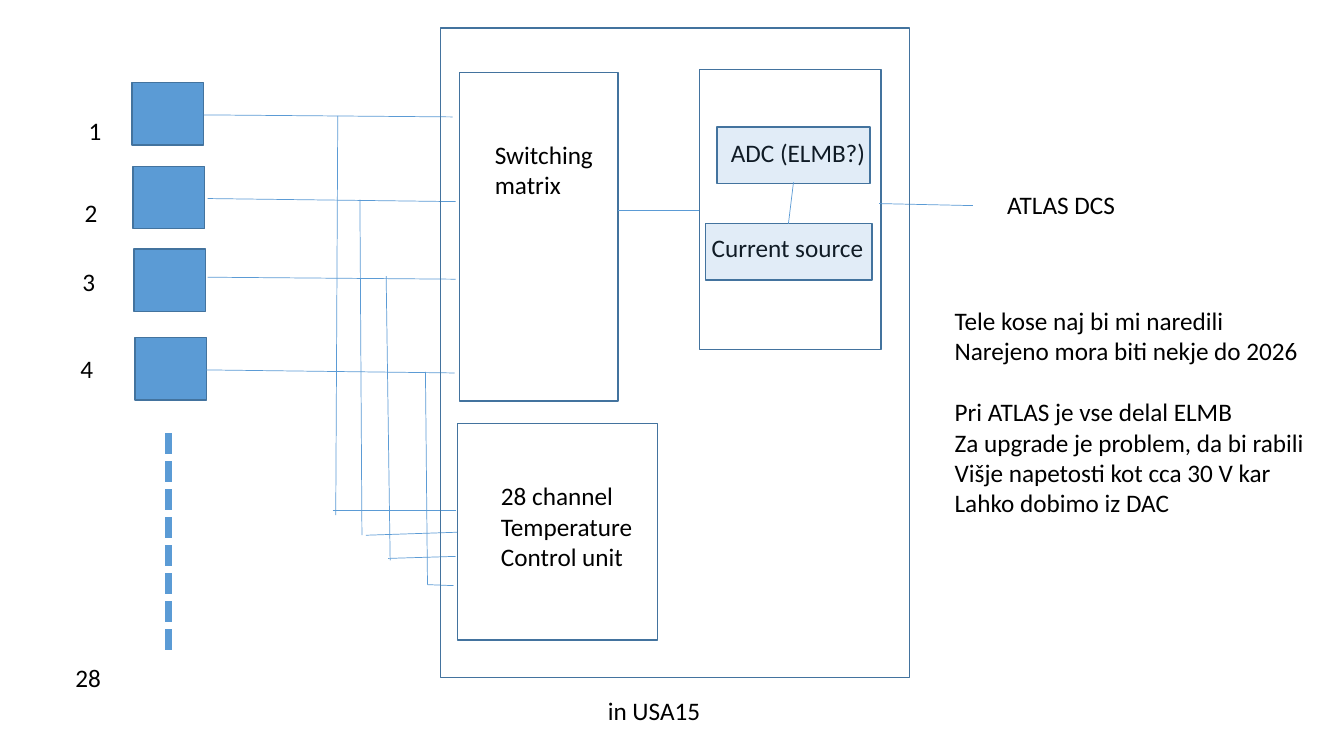
from pptx import Presentation
from pptx.dml.color import RGBColor
from pptx.enum.dml import MSO_LINE
from pptx.enum.shapes import MSO_CONNECTOR, MSO_SHAPE
from pptx.enum.text import MSO_AUTO_SIZE
from pptx.oxml.ns import qn
from pptx.util import Inches, Pt
from lxml import etree

RECT = MSO_SHAPE.RECTANGLE
STRAIGHT = MSO_CONNECTOR.STRAIGHT
DASH = MSO_LINE.SQUARE_DOT
GROW = MSO_AUTO_SIZE.SHAPE_TO_FIT_TEXT
BLUE = RGBColor(0x5B, 0x9B, 0xD5)
EDGE = RGBColor(0x43, 0x73, 0x9E)
BLACK = RGBColor(0, 0, 0)


def add_box(slide, x, y, w, h, fill=None, alpha=None):
    """Draw an outlined rectangle, optionally filled and translucent."""
    box = slide.shapes.add_shape(RECT, Inches(x), Inches(y), Inches(w), Inches(h))
    box.shadow.inherit = False
    box.line.color.rgb = EDGE
    box.line.width = Pt(1)
    if fill is None:
        box.fill.background()
        return
    box.fill.solid()
    box.fill.fore_color.rgb = fill
    if alpha:
        color = box.fill._xPr.find(qn("a:solidFill"))[0]
        etree.SubElement(color, qn("a:alpha")).set("val", str(alpha * 1000))


def add_wire(slide, x, y, ends, width=0.5):
    """Draw a line between two points measured from x, y and return it."""
    x1, y1, x2, y2 = ends
    wire = slide.shapes.add_connector(
        STRAIGHT, Inches(x + x1), Inches(y + y1), Inches(x + x2), Inches(y + y2))
    wire.line.color.rgb = BLUE
    wire.line.width = Pt(width)
    etree.SubElement(wire._element.spPr, qn("a:effectLst"))
    return wire


def add_label(slide, x, y, w, h, text):
    """Write unwrapped black text and return its frame."""
    frame = slide.shapes.add_textbox(
        Inches(x), Inches(y), Inches(w), Inches(h)).text_frame
    frame.text = text
    frame.word_wrap = False
    frame.auto_size = GROW
    for para in frame.paragraphs:
        font = para.runs[0].font
        font.name = "Calibri"
        font.size = Pt(18)
        font.color.rgb = BLACK
    return frame


def add_sensors(slide, x, y):
    """Stack the numbered sensors, with dashes leading to the last one."""
    rows = [(0, 0.13, 0.27), (0.83, 0.09, 1.09), (1.65, 0.07, 1.77), (2.53, 0.05, 2.64)]
    for i, (top, left, mid) in enumerate(rows):
        add_box(slide, x + 0.66 + i * 0.01, y + top, 0.71, 0.62, BLUE)
        add_label(slide, x + left, y + mid, 0.33, 0.4, str(i + 1))
    add_wire(slide, x, y, (1.02, 3.48, 1.02, 5.68), 5).line.dash_style = DASH
    add_label(slide, x, y + 5.7, 0.46, 0.4, "28")


def add_harness(slide, x, y):
    """Run each sensor's lead to the matrix and its branch to the control unit."""
    leads = [(0, 0, 2.47, 0.02), (0.04, 0.83, 2.5, 0.86),
             (0.04, 1.61, 2.5, 1.63), (0.02, 2.53, 2.49, 2.56)]
    drops = [(1.33, 0.01, 1.31, 3.97), (1.55, 0.84, 1.57, 4.17),
             (1.81, 1.6, 1.85, 4.42), (2.2, 2.55, 2.22, 4.66)]
    feeds = [(1.28, 3.92, 2.5, 3.92), (1.61, 4.17, 2.52, 4.14),
             (1.83, 4.4, 2.5, 4.38), (2.22, 4.66, 2.48, 4.67)]
    for ends in leads + drops + feeds:
        add_wire(slide, x, y, ends)


def add_readout(slide, x, y, w, h):
    """Draw the readout unit with its converter and current source."""
    add_box(slide, x, y, w, h)
    add_label(slide, x + 0.21, y + 0.62, 1.55, 0.4, "ADC (ELMB?)")
    add_label(slide, x + 0.02, y + 1.57, 1.72, 0.4, "Current source")
    add_box(slide, x + 0.17, y + 0.57, 1.52, 0.56, BLUE, 18)
    add_box(slide, x + 0.06, y + 1.53, 1.65, 0.56, BLUE, 18)
    for ends in [(0.93, 1.12, 0.88, 1.53), (-0.81, 1.4, -0.01, 1.4),
                 (1.78, 1.33, 2.71, 1.35)]:
        add_wire(slide, x, y, ends)
    add_label(slide, x + 2.95, y + 1.14, 1.28, 0.4, "ATLAS DCS")


def add_rack(slide, x, y, w, h):
    """Draw the rack with its matrix, control unit and readout."""
    add_box(slide, x + 0.19, y + 0.44, 1.57, 3.26)
    add_label(slide, x + 0.44, y + 1.05, 1.19, 0.71, "Switching\nmatrix")
    add_box(slide, x + 0.17, y + 3.92, 1.98, 2.15)
    add_label(slide, x + 0.5, y + 4.44, 1.52, 1.01,
              "28 channel\nTemperature\nControl unit")
    add_readout(slide, x + 2.57, y + 0.41, 1.8, 2.78)
    add_box(slide, x, y, w, h)
    add_label(slide, x + 1.56, y + h + 0.13, 1.13, 0.4, "in USA15")


def add_notes(slide, x, y, w, h):
    """Write the two groups of remarks with a line's gap between them."""
    lines = ["Tele kose naj bi mi naredili",
             "Narejeno mora biti nekje do 2026",
             "Pri ATLAS je vse delal ELMB",
             "Za upgrade je problem, da bi rabili",
             "Višje napetosti kot cca 30 V kar",
             "Lahko dobimo iz DAC"]
    frame = add_label(slide, x, y, w, h, "\n".join(lines))
    frame.paragraphs[2].space_before = Pt(22)


def main():
    """Build and save the slide."""
    deck = Presentation()
    deck.slide_width = Inches(13.33)
    deck.slide_height = Inches(7.5)
    slide = deck.slides.add_slide(deck.slide_layouts[6])
    add_sensors(slide, 0.65, 0.82)
    add_harness(slide, 2.02, 1.14)
    add_rack(slide, 4.37, 0.28, 4.65, 6.44)
    add_notes(slide, 9.37, 2.98, 3.71, 2.22)
    deck.save("out.pptx")


if __name__ == "__main__":
    main()
